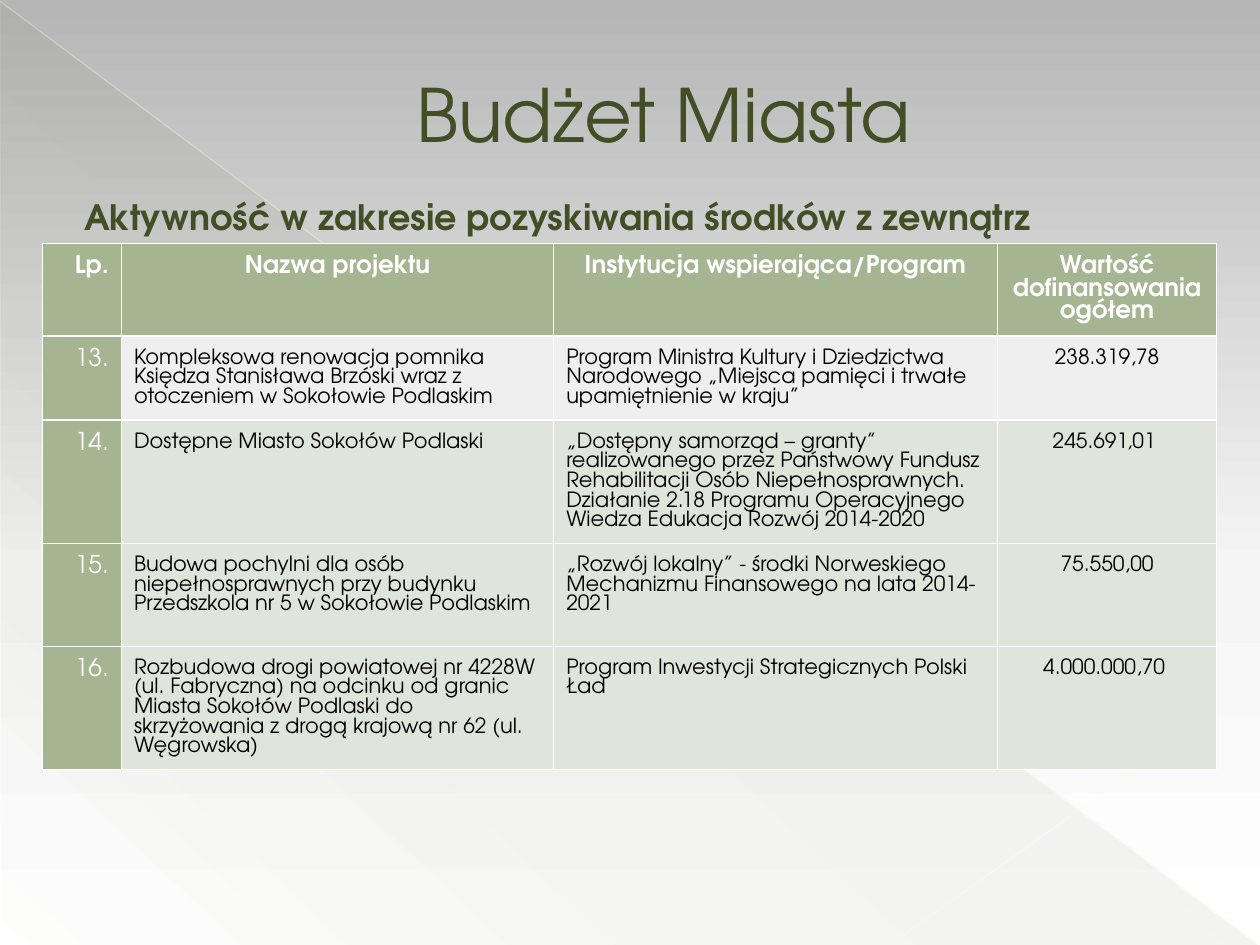
import pptx
import pptx.util
import pptx.dml.color
import pptx.enum.shapes
import pptx.enum.text
import pptx.oxml
import pptx.oxml.ns

Pt = pptx.util.Pt
qn = pptx.oxml.ns.qn
ALIGN = pptx.enum.text.PP_ALIGN
NAMESPACE = pptx.oxml.ns.nsdecls("a")

COLOURS = {
    "olive": "444D26",
    "sage": "A5B592",
    "grey band": "EFEFEF",
    "green band": "E0E5DB",
    "white": "FFFFFF",
    "black": "000000",
    "cream": "FFFFD5",
    "pale cream": "FFFFD9",
    "grey": "B6B6B6",
    "light grey": "F5F5F5",
}

HEADINGS = ["Lp.", "Nazwa projektu", "Instytucja wspierająca/Program",
            "Wartość dofinansowania ogółem"]
PROJECTS = [
    ["13.",
     "Kompleksowa renowacja pomnika Księdza Stanisława Brzóski wraz z otoczeniem w Sokołowie Podlaskim",
     "Program Ministra Kultury i Dziedzictwa Narodowego „Miejsca pamięci i trwałe upamiętnienie w kraju”",
     "238.319,78"],
    ["14.",
     "Dostępne Miasto Sokołów Podlaski",
     "„Dostępny samorząd – granty” realizowanego przez Państwowy Fundusz Rehabilitacji Osób "
     "Niepełnosprawnych. Działanie 2.18 Programu Operacyjnego Wiedza Edukacja Rozwój 2014-2020",
     "245.691,01 "],
    ["15.",
     "Budowa pochylni dla osób niepełnosprawnych przy budynku Przedszkola nr 5 w Sokołowie Podlaskim",
     "„Rozwój lokalny” - środki Norweskiego Mechanizmu Finansowego na lata 2014-2021",
     "75.550,00"],
    ["16.",
     "Rozbudowa drogi powiatowej nr 4228W (ul. Fabryczna) na odcinku od granic Miasta Sokołów "
     "Podlaski do skrzyżowania z drogą krajową nr 62 (ul. Węgrowska)",
     "Program Inwestycji Strategicznych Polski Ład",
     "4.000.000,70 "],
]
COLUMN_WIDTHS = [45.2, 247, 253.6, 125.4]
ROW_HEIGHTS = [53.1, 48, 70.4, 58.8, 70.4]
BODY_ALIGNMENTS = [ALIGN.RIGHT, ALIGN.LEFT, ALIGN.LEFT, ALIGN.CENTER]


class SlideBuilder:
    font = "TeX Gyre Adventor"
    line_spacing = {12: 11.2, 14: 12.9}

    def __init__(self, slide):
        self.slide = slide

    def rgb(self, colour):
        return pptx.dml.color.RGBColor.from_string(COLOURS[colour])

    def gradient(self, parent, stops, angle):
        """Replace the solid fill in parent; stops are (position, colour, opacity) in percent."""
        stop_xml = "".join(
            f'<a:gs pos="{position * 1000}"><a:srgbClr val="{COLOURS[colour]}">'
            f'<a:alpha val="{opacity * 1000}"/></a:srgbClr></a:gs>'
            for position, colour, opacity in stops)
        gradient = pptx.oxml.parse_xml(
            f'<a:gradFill {NAMESPACE} rotWithShape="1"><a:gsLst>{stop_xml}</a:gsLst>'
            f'<a:lin ang="{angle * 60000}" scaled="0"/></a:gradFill>')
        parent.replace(parent.find(qn("a:solidFill")), gradient)

    def background(self, stops, angle):
        self.slide.background.fill.solid()
        self.gradient(next(self.slide.element.iter(qn("p:bgPr"))), stops, angle)

    def triangle(self, left, top, width, height, stops, angle):
        shape = self.slide.shapes.add_shape(
            pptx.enum.shapes.MSO_SHAPE.RIGHT_TRIANGLE, Pt(left), Pt(top), Pt(width), Pt(height))
        shape.shadow.inherit = False
        shape.line.fill.background()
        shape.fill.solid()
        self.gradient(shape.element.spPr, stops, angle)

    def line(self, start, end, colour, opacity):
        connector = self.slide.shapes.add_connector(
            pptx.enum.shapes.MSO_CONNECTOR.STRAIGHT, *map(Pt, start + end))
        connector.line.width = Pt(0.75)
        connector.line.color.rgb = self.rgb(colour)
        properties = connector.element.spPr
        next(properties.iter(qn("a:srgbClr"))).append(
            pptx.oxml.parse_xml(f'<a:alpha {NAMESPACE} val="{opacity * 1000}"/>'))
        properties.append(pptx.oxml.parse_xml(f"<a:effectLst {NAMESPACE}/>"))

    def format_text(self, paragraph, size, colour, bold, alignment):
        paragraph.alignment = alignment
        for run in paragraph.runs:
            run.font.name = self.font
            run.font.size = Pt(size)
            run.font.bold = bold
            run.font.color.rgb = self.rgb(colour)

    def text(self, words, left, top, width, height, size, indent,
             bold=False, alignment=ALIGN.LEFT, anchor=pptx.enum.text.MSO_ANCHOR.TOP):
        box = self.slide.shapes.add_textbox(Pt(left), Pt(top), Pt(width), Pt(height))
        frame = box.text_frame
        frame.word_wrap = True
        frame.vertical_anchor = anchor
        frame.text = words
        paragraph = frame.paragraphs[0]
        paragraph._p.get_or_add_pPr().set("marL", str(Pt(indent)))
        self.format_text(paragraph, size, "olive", bold, alignment)

    def cell(self, cell, words, fill, size, colour, bold, alignment):
        cell.margin_left = cell.margin_right = cell.margin_top = cell.margin_bottom = Pt(7.2)
        cell.fill.solid()
        cell.fill.fore_color.rgb = self.rgb(fill)
        for index, side in enumerate(["lnL", "lnR", "lnT", "lnB"]):
            cell._tc.get_or_add_tcPr().insert(index, pptx.oxml.parse_xml(
                f'<a:{side} {NAMESPACE} w="{Pt(0.75)}"><a:solidFill>'
                f'<a:srgbClr val="{COLOURS["white"]}"/></a:solidFill></a:{side}>'))
        cell.text_frame.text = words
        paragraph = cell.text_frame.paragraphs[0]
        paragraph.line_spacing = Pt(self.line_spacing[size])
        self.format_text(paragraph, size, colour, bold, alignment)

    def table(self, left, top, rows):
        table = self.slide.shapes.add_table(
            len(rows), len(COLUMN_WIDTHS), Pt(left), Pt(top),
            Pt(sum(COLUMN_WIDTHS)), Pt(sum(ROW_HEIGHTS))).table
        table.horz_banding = False
        for column, width in zip(table.columns, COLUMN_WIDTHS):
            column.width = Pt(width)
        for row, height in zip(table.rows, ROW_HEIGHTS):
            row.height = Pt(height)
        for row_index, row in enumerate(rows):
            for column_index, words in enumerate(row):
                heading = row_index == 0
                if heading or column_index == 0:
                    fill, size, colour = "sage", 14, "white"
                else:
                    fill = "grey band" if row_index == 1 else "green band"
                    size, colour = 12, "black"
                alignment = BODY_ALIGNMENTS[column_index]
                if heading and column_index > 0:
                    alignment = ALIGN.CENTER
                self.cell(table.cell(row_index, column_index), words,
                          fill, size, colour, heading, alignment)


def main():
    presentation = pptx.Presentation()
    presentation.slide_width, presentation.slide_height = Pt(720), Pt(540)
    builder = SlideBuilder(presentation.slides.add_slide(presentation.slide_layouts[6]))

    builder.background([(0, "grey", 100), (60, "light grey", 100), (100, "white", 100)], 90)
    builder.triangle(0.7, 1.4, 718.6, 538.6,
                     [(0, "olive", 7), (70, "olive", 5), (100, "olive", 0)], 133)
    builder.line((0, 0.7), (719.3, 539.3), "cream", 33)
    builder.line((720, 389.5), (509, 539.3), "pale cream", 42)
    builder.text("Aktywność w zakresie pozyskiwania środków z zewnątrz",
                 36, 108, 648, 43.2, size=20, indent=5, bold=True)
    builder.text("Budżet Miasta", 36, 20.9, 648, 87.1, size=42, indent=38.2,
                 alignment=ALIGN.CENTER, anchor=pptx.enum.text.MSO_ANCHOR.MIDDLE)
    builder.table(24.2, 138.9, [HEADINGS] + PROJECTS)

    presentation.save("out.pptx")


if __name__ == "__main__":
    main()
